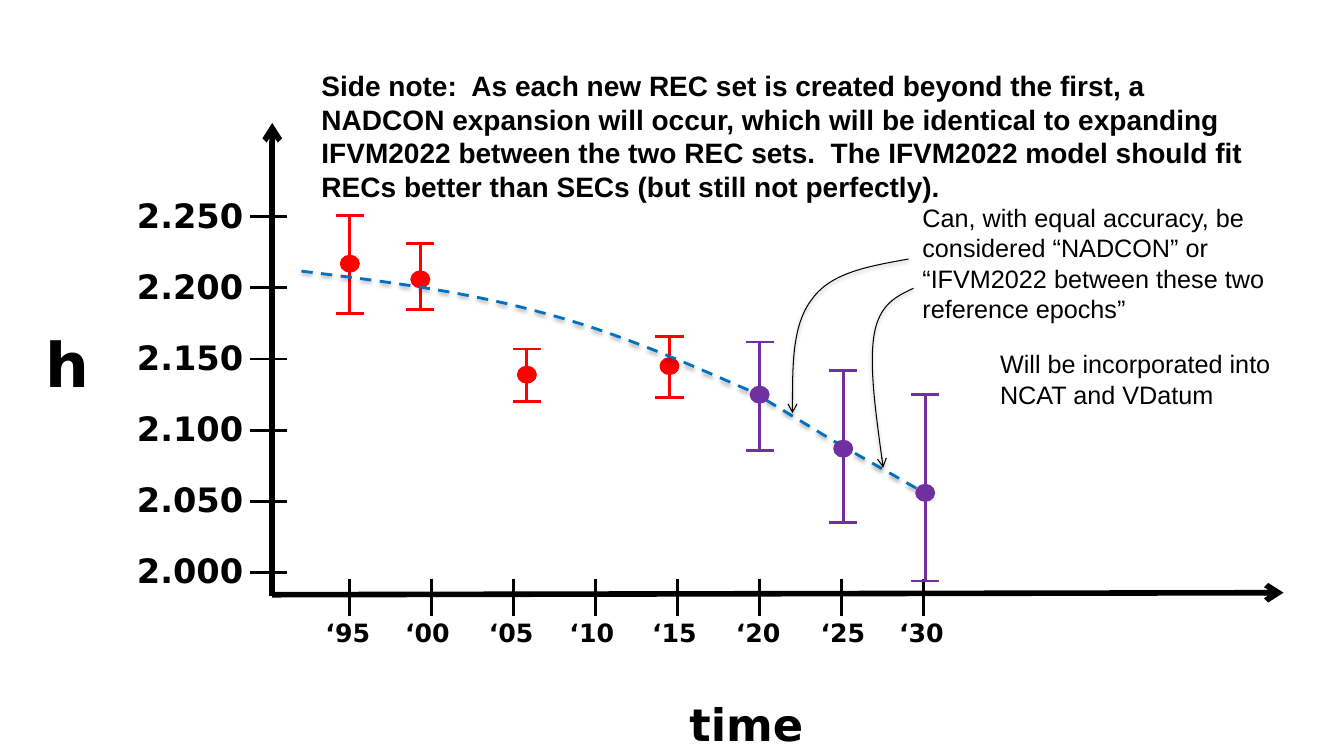
from lxml import etree
from pptx import Presentation
from pptx.dml.color import RGBColor
from pptx.enum.dml import MSO_LINE
from pptx.enum.shapes import MSO_CONNECTOR, MSO_SHAPE
from pptx.enum.text import MSO_AUTO_SIZE
from pptx.oxml.ns import qn
from pptx.util import Inches, Pt

STRAIGHT = MSO_CONNECTOR.STRAIGHT
OVAL = MSO_SHAPE.OVAL
DASH = MSO_LINE.DASH
GROW = MSO_AUTO_SIZE.SHAPE_TO_FIT_TEXT

COLORS = {"ink": "000000", "trend": "0070C0", "past": "FF0000", "future": "7030A0"}
LABEL_FONT = "DejaVu Sans"
NOTE_FONT = "Arial"

LEFT, TOP = 3.47, 2.15
YEAR_WIDTH = (9.16 - LEFT) / 35
MILLI_HEIGHT = (5.68 - TOP) / 250
DOT_WIDTH, DOT_HEIGHT = 0.17, 0.15
CAP = 0.14

deck = Presentation()
deck.slide_width = Inches(13.33)
deck.slide_height = Inches(7.5)
page = deck.slides.add_slide(deck.slide_layouts[6])


def add_text(text, left, top, width, height, size, font=LABEL_FONT, bold=True, wrap=False,
             parent=page):
    box = parent.shapes.add_textbox(*map(Inches, (left, top, width, height)))
    frame = box.text_frame
    frame.word_wrap = wrap
    frame.auto_size = GROW
    for index, line in enumerate(text.split("\n")):
        para = frame.paragraphs[0] if index == 0 else frame.add_paragraph()
        span = para.add_run()
        span.text = line
        span.font.name = font
        span.font.size = Pt(size)
        span.font.bold = bold
        span.font.color.rgb = RGBColor.from_string(COLORS["ink"])


def add_stroke(points, color="ink", width=2, dashed=False, arrow=False, shadow=0, parent=page):
    spots = [(Inches(x), Inches(y)) for x, y in points]
    if len(spots) == 2:
        stroke = parent.shapes.add_connector(STRAIGHT, *spots[0], *spots[1])
    else:
        builder = parent.shapes.build_freeform(*spots[0])
        builder.add_line_segments(spots[1:], close=False)
        stroke = builder.convert_to_shape()
        stroke.fill.background()
        segments = list(stroke.element.iter(qn("a:lnTo")))
        for first in range(0, len(segments), 3):
            bend = etree.Element(qn("a:cubicBezTo"))
            segments[first].addprevious(bend)
            for segment in segments[first:first + 3]:
                bend.append(segment[0])
                segment.getparent().remove(segment)
    stroke.line.color.rgb = RGBColor.from_string(COLORS[color])
    stroke.line.width = Pt(width)
    if dashed:
        stroke.line.dash_style = DASH
    properties = stroke.element.spPr
    if arrow:
        etree.SubElement(properties.find(qn("a:ln")), qn("a:tailEnd"), type="arrow")
    effects = etree.SubElement(properties, qn("a:effectLst"))
    if shadow:
        outer = etree.SubElement(effects, qn("a:outerShdw"), blurRad=str(Pt(3.1)),
                                 dist=str(Pt(1.7)), dir="5400000", rotWithShape="0")
        shade = etree.SubElement(outer, qn("a:srgbClr"), val=COLORS["ink"])
        etree.SubElement(shade, qn("a:alpha"), val=str(shadow * 1000))


trend_ends = [(9.24, 4.93), (8.31, 4.4), (7.6, 3.97)]
for end, start in zip(trend_ends, trend_ends[1:]):
    add_stroke([start, end], "trend", dashed=True, shadow=38)

add_stroke([(2.7, 5.91), (2.7, 1.22)], width=4, arrow=True)
add_stroke([(2.7, 5.9), (12.73, 5.88)], width=4, arrow=True)

for milli in range(2000, 2251, 50):
    y = TOP + (2250 - milli) * MILLI_HEIGHT
    add_stroke([(2.85, y), (2.48, y)])
    add_text(f"{milli / 1000:.3f}", 1.26, y - 0.27, 1.28, 0.5, 24)

add_text("h", 0.35, 3.18, 0.64, 0.84, 44)
add_text("time", 6.74, 6.86, 1.33, 0.64, 32)

year_axis = page.shapes.add_group_shape()
label_lefts = [3.13, 3.92, 4.75, 5.55, 6.37, 7.2, 8.04, 8.82]
for year, label_left in zip(range(1995, 2031, 5), label_lefts):
    x = LEFT + (year - 1995) * YEAR_WIDTH
    add_stroke([(x, 5.74), (x, 6.11)], parent=year_axis)
    add_text(f"‘{year % 100:02}", label_left, 6.08, 0.64, 0.4, 18, parent=year_axis)

past_group = page.shapes.add_group_shape()

add_stroke([(2.99, 2.69), (3.8, 2.79), (4.61, 2.89), (5.37, 3.1),
            (6.13, 3.3), (6.85, 3.62), (7.56, 3.93)],
           "trend", dashed=True, arrow=True, shadow=35)

measurements = [
    ("past", 1995, 2182, 2217, 2251),
    ("past", 1999.3, 2185, 2206, 2231),
    ("past", 2005.8, 2120, 2139, 2157),
    ("past", 2014.5, 2123, 2145, 2166),
    ("future", 2030.1, 1994, 2056, 2125),
    ("future", 2020, 2086, 2125, 2162),
    ("future", 2025.1, 2035, 2087, 2142),
]
for color, year, *levels in measurements:
    group = past_group if color == "past" else page.shapes.add_group_shape()
    x = LEFT + (year - 1995) * YEAR_WIDTH
    low, middle, high = [TOP + (2250 - level) * MILLI_HEIGHT for level in levels]
    dot = group.shapes.add_shape(OVAL, Inches(x - DOT_WIDTH / 2), Inches(middle - DOT_HEIGHT / 2),
                                 Inches(DOT_WIDTH), Inches(DOT_HEIGHT))
    dot.shadow.inherit = False
    dot.fill.solid()
    dot.fill.fore_color.rgb = RGBColor.from_string(COLORS[color])
    dot.line.color.rgb = RGBColor.from_string(COLORS[color])
    dot.line.width = Pt(2)
    add_stroke([(x, low), (x, high)], color, parent=group)
    for y in (low, high):
        add_stroke([(x - CAP, y), (x + CAP, y)], color, parent=group)

add_text("Side note:  As each new REC set is created beyond the first, a NADCON expansion will "
         "occur, which will be identical to expanding IFVM2022 between the two REC sets.  The "
         "IFVM2022 model should fit RECs better than SECs (but still not perfectly).",
         3.09, 0.63, 9.47, 1.45, 20, NOTE_FONT, wrap=True)
add_text("Can, with equal accuracy, be considered “NADCON” or “IFVM2022 between these two "
         "reference epochs”", 9.05, 1.96, 3.91, 1.31, 18, NOTE_FONT, bold=False, wrap=True)

pointers = [
    [(9.01, 2.57), (8.63, 2.64), (8.25, 2.7), (8.06, 2.96),
     (7.86, 3.21), (7.86, 3.66), (7.86, 4.1)],
    [(9.06, 2.86), (8.89, 2.94), (8.72, 3.02), (8.67, 3.32),
     (8.62, 3.62), (8.69, 4.13), (8.76, 4.64)],
]
for pointer in pointers:
    add_stroke(pointer, width=0.75, arrow=True, shadow=35)

add_text("Will be incorporated into\nNCAT and VDatum",
         9.82, 3.41, 2.91, 0.71, 18, NOTE_FONT, bold=False)

deck.save("out.pptx")
